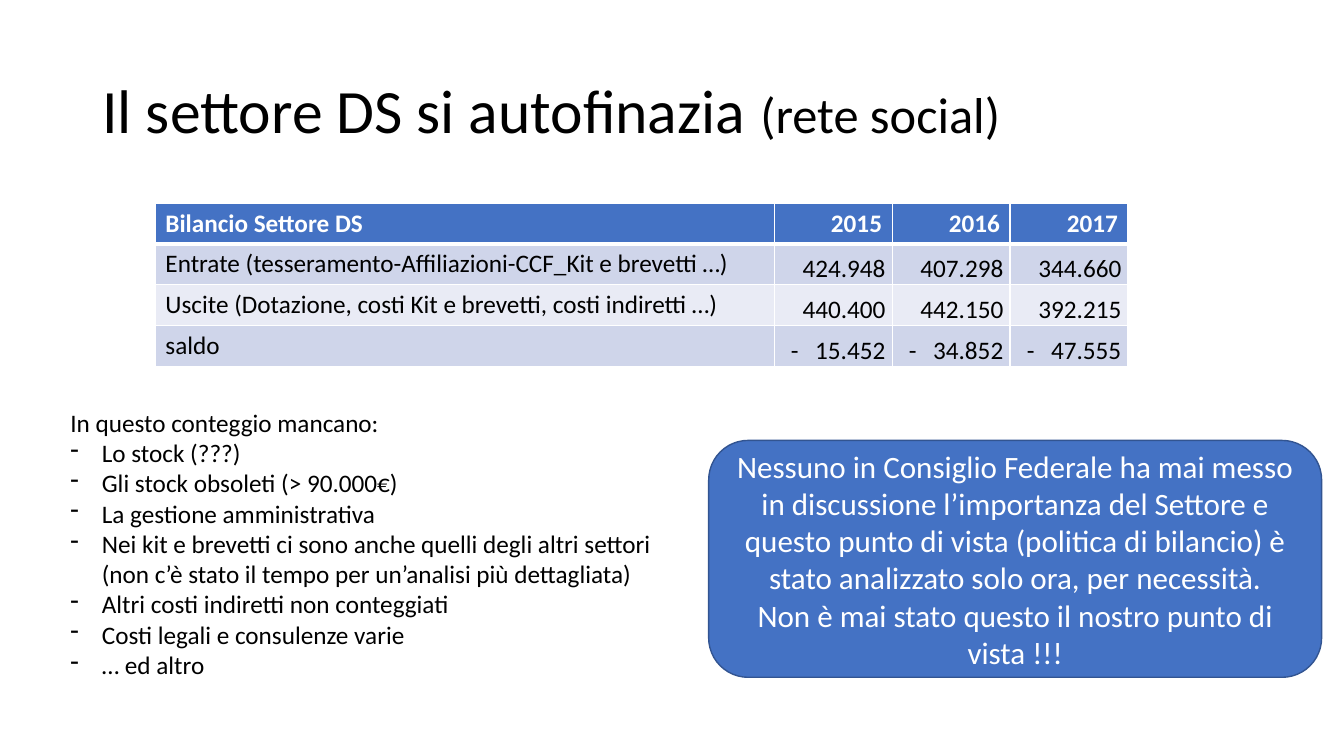
from lxml import etree
from pptx import Presentation
from pptx import util as u
from pptx.dml.color import RGBColor
from pptx.enum import shapes, text
from pptx.oxml import ns

Pt = u.Pt
HUES = {"ink": "000000", "white": "FFFFFF", "blue": "4472C4", "edge": "325491",
        "odd": "CFD5EA", "even": "E9EBF5"}


def rgb(name):
    return RGBColor.from_string(HUES[name])


def style(para, size, hue, bold=False):
    para.font.name = "Calibri"
    para.font.size = Pt(size)
    para.font.bold = bold
    para.font.color.rgb = rgb(hue)


deck = Presentation()
deck.slide_width, deck.slide_height = Pt(960), Pt(540)
slide = deck.slides.add_slide(deck.slide_layouts[5])

# Title
title = slide.shapes.title
title.left, title.top, title.width, title.height = Pt(66), Pt(28.75), Pt(828), Pt(104.4)
frame = title.text_frame
frame.word_wrap = True
frame.auto_size = text.MSO_AUTO_SIZE.NONE
frame.vertical_anchor = text.MSO_ANCHOR.MIDDLE
para = frame.paragraphs[0]
para.alignment = text.PP_ALIGN.LEFT
para.line_spacing = 0.9
for words, size in (("Il settore DS si autofinazia ", 44), ("(rete social)", 36)):
    run = para.add_run()
    run.text = words
    run.font.name = "Calibri"
    run.font.size = Pt(size)
    run.font.color.rgb = rgb("ink")

# Budget table
ROWS = [
    ("Bilancio Settore DS", "2015", "2016", "2017"),
    ("Entrate (tesseramento-Affiliazioni-CCF_Kit e brevetti …)",
     "424.948", "407.298", "344.660"),
    ("Uscite (Dotazione, costi Kit e brevetti, costi indiretti …)",
     "440.400", "442.150", "392.215"),
    ("saldo", "-\t15.452", "-\t34.852", "-\t47.555"),
]
WIDTHS = (442, 84.25, 84.25, 84.25)
HIGH = 29.2
table = slide.shapes.add_table(len(ROWS), len(WIDTHS), Pt(111), Pt(145),
                               Pt(sum(WIDTHS)), Pt(HIGH * len(ROWS))).table
for col, width in zip(table.columns, WIDTHS):
    col.width = Pt(width)
for r, row in enumerate(ROWS):
    table.rows[r].height = Pt(HIGH)
    for c, words in enumerate(row):
        cell = table.cell(r, c)
        cell.text = words
        para = cell.text_frame.paragraphs[0]

        # White rules, thicker below the header
        props = cell._tc.get_or_add_tcPr()
        for side in "LRTB":
            thick = (r, side) in ((0, "B"), (1, "T"))
            line = etree.SubElement(props, ns.qn("a:ln" + side), w=str(Pt(3 if thick else 1)))
            fill = etree.SubElement(line, ns.qn("a:solidFill"))
            etree.SubElement(fill, ns.qn("a:srgbClr"), val=HUES["white"])
        cell.fill.solid()
        cell.fill.fore_color.rgb = rgb("blue" if r == 0 else "odd" if r % 2 else "even")

        # Figures sit at the bottom right; a tab parts the minus sign
        if c:
            para.alignment = text.PP_ALIGN.RIGHT
        if c and r:
            cell.vertical_anchor = text.MSO_ANCHOR.BOTTOM
            cell.margin_top, cell.margin_bottom = Pt(0.75), 0
            cell.margin_left, cell.margin_right = Pt(1), Pt(4.75)
        if "\t" in words:
            para.alignment = text.PP_ALIGN.LEFT
            cell.margin_left, cell.margin_right = Pt(12), Pt(1)
            tabs = etree.SubElement(para._p.get_or_add_pPr(), ns.qn("a:tabLst"))
            etree.SubElement(tabs, ns.qn("a:tab"), pos=str(Pt(67.5)), algn="r")
        style(para, 18, "ink" if r else "white", r == 0)

# Missing items
ITEMS = [
    "In questo conteggio mancano:",
    "Lo stock (???)",
    "Gli stock obsoleti (> 90.000€)",
    "La gestione amministrativa",
    "Nei kit e brevetti ci sono anche quelli degli altri settori "
    "(non c’è stato il tempo per un’analisi più dettagliata)",
    "Altri costi indiretti non conteggiati",
    "Costi legali e consulenze varie",
    "… ed altro",
]
notes = slide.shapes.add_textbox(Pt(43.2), Pt(287.3), Pt(450.7), Pt(203.8)).text_frame
notes.word_wrap = True
for i, words in enumerate(ITEMS):
    para = notes.add_paragraph() if i else notes.paragraphs[0]
    para.text = words
    if i:
        props = para._p.get_or_add_pPr()
        props.set("marL", str(Pt(22.5)))
        props.set("indent", str(-Pt(22.5)))
        etree.SubElement(props, ns.qn("a:buChar"), char="-")
    style(para, 18, "ink")

# Closing statement
CLAIMS = [
    "Nessuno in Consiglio Federale ha mai messo in discussione l’importanza del Settore "
    "e questo punto di vista (politica di bilancio) è stato analizzato solo ora, "
    "per necessità.",
    "Non è mai stato questo il nostro punto di vista !!!",
]
panel = slide.shapes.add_shape(shapes.MSO_SHAPE.ROUNDED_RECTANGLE,
                               Pt(506.2), Pt(314.6), Pt(437.8), Pt(169.2))
panel.shadow.inherit = False
panel.fill.solid()
panel.fill.fore_color.rgb = rgb("blue")
panel.line.color.rgb = rgb("edge")
panel.line.width = Pt(1)
frame = panel.text_frame
frame.word_wrap = True
frame.vertical_anchor = text.MSO_ANCHOR.MIDDLE
for i, words in enumerate(CLAIMS):
    para = frame.add_paragraph() if i else frame.paragraphs[0]
    para.text = words
    para.alignment = text.PP_ALIGN.CENTER
    style(para, 22.2, "white")

deck.save("out.pptx")
